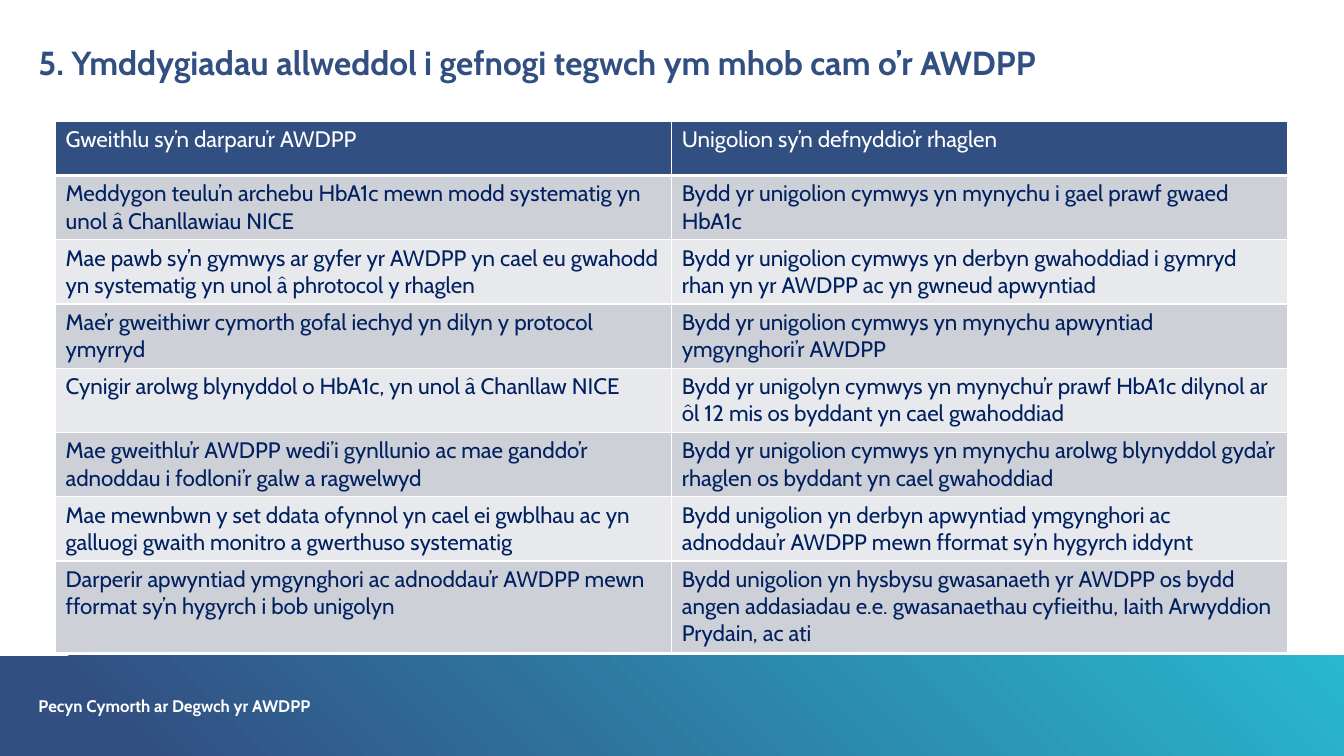
from lxml import etree
from pptx import Presentation
from pptx.dml.color import RGBColor
from pptx.enum import shapes, text
from pptx.oxml import ns
from pptx.util import Cm, Pt

FONT = "Cabin"
NAVY = RGBColor(0x32, 0x4F, 0x82)
TEAL = RGBColor(0x28, 0xB8, 0xCE)
INK = RGBColor(0x00, 0x20, 0x60)
WHITE = RGBColor(0xFF, 0xFF, 0xFF)
ROW_DARK = RGBColor(0xCE, 0xD0, 0xD8)
ROW_LIGHT = RGBColor(0xE8, 0xE9, 0xED)

BEHAVIOURS = [
    ("Gweithlu sy’n darparu’r AWDPP",
     "Unigolion sy’n defnyddio’r rhaglen"),
    ("Meddygon teulu’n archebu HbA1c mewn modd systematig yn unol â Chanllawiau NICE",
     "Bydd yr unigolion cymwys yn mynychu i gael prawf gwaed HbA1c"),
    ("Mae pawb sy’n gymwys ar gyfer yr AWDPP yn cael eu gwahodd yn systematig yn unol â phrotocol y rhaglen",
     "Bydd yr unigolion cymwys yn derbyn gwahoddiad i gymryd rhan yn yr AWDPP ac yn gwneud apwyntiad"),
    ("Mae’r gweithiwr cymorth gofal iechyd yn dilyn y protocol ymyrryd",
     "Bydd yr unigolion cymwys yn mynychu apwyntiad ymgynghori’r AWDPP"),
    ("Cynigir arolwg blynyddol o HbA1c, yn unol â Chanllaw NICE",
     "Bydd yr unigolyn cymwys yn mynychu’r prawf HbA1c dilynol ar ôl 12 mis os byddant yn cael gwahoddiad"),
    ("Mae gweithlu’r AWDPP wedi’i gynllunio ac mae ganddo’r adnoddau i fodloni’r galw a ragwelwyd",
     "Bydd yr unigolion cymwys yn mynychu arolwg blynyddol gyda’r rhaglen os byddant yn cael gwahoddiad"),
    ("Mae mewnbwn y set ddata ofynnol yn cael ei gwblhau ac yn galluogi gwaith monitro a gwerthuso systematig",
     "Bydd unigolion yn derbyn apwyntiad ymgynghori ac adnoddau’r AWDPP mewn fformat sy’n hygyrch iddynt"),
    ("Darperir apwyntiad ymgynghori ac adnoddau’r AWDPP mewn fformat sy’n hygyrch i bob unigolyn",
     "Bydd unigolion yn hysbysu gwasanaeth yr AWDPP os bydd angen addasiadau e.e. gwasanaethau cyfieithu, "
     "Iaith Arwyddion Prydain, ac ati"),
]
ROW_HEIGHTS = [Cm(1.37)] + [Cm(1.61)] * 6 + [Cm(2.27)]


def add_run(paragraph, words, size, colour, bold=False):
    run = paragraph.add_run()
    run.text = words
    run.font.name = FONT
    run.font.size = Pt(size)
    run.font.bold = bold
    run.font.color.rgb = colour


def fill_placeholder(holder, box, words, size, colour, spacing):
    holder.left, holder.top, holder.width, holder.height = box
    frame = holder.text_frame
    frame.margin_left = frame.margin_right = 0
    frame.margin_top = frame.margin_bottom = 0
    frame.word_wrap = True
    frame.auto_size = text.MSO_AUTO_SIZE.NONE
    frame.vertical_anchor = text.MSO_ANCHOR.TOP
    line = frame.paragraphs[0]
    properties = line._p.get_or_add_pPr()
    properties.set("marL", "0")
    properties.set("indent", "0")
    etree.SubElement(properties, ns.qn("a:buNone"))
    line.alignment = text.PP_ALIGN.LEFT
    line.line_spacing = spacing
    line.space_before = Pt(0)
    add_run(line, words, size, colour, bold=True)


def add_footer_band(slide, width):
    band = slide.shapes.add_shape(shapes.MSO_SHAPE.RECTANGLE, 0, Cm(16.53), width, Cm(2.52))
    band.shadow.inherit = False
    band.line.fill.background()
    band.fill.gradient()
    band.fill.gradient_angle = 45
    for stop, position, colour in zip(band.fill.gradient_stops, (0.1, 1), (NAVY, TEAL)):
        stop.position = position
        stop.color.rgb = colour
    # Send the band behind the footer text
    slide.shapes._spTree.insert(2, band._element)


def set_borders(cell, bottom):
    properties = cell._tc.get_or_add_tcPr()
    for side, points in (("lnL", 1), ("lnR", 1), ("lnT", 1), ("lnB", bottom)):
        edge = etree.SubElement(properties, ns.qn(f"a:{side}"), w=str(Pt(points)))
        solid = etree.SubElement(edge, ns.qn("a:solidFill"))
        etree.SubElement(solid, ns.qn("a:srgbClr"), val=str(WHITE))


def add_behaviours(slide):
    frame = slide.shapes.add_table(len(BEHAVIOURS), 2, Cm(1.4), Cm(3.05),
                                   Cm(31.06), sum(ROW_HEIGHTS))
    grid = frame.table
    grid.horz_banding = False
    for row, (height, entries) in enumerate(zip(ROW_HEIGHTS, BEHAVIOURS)):
        grid.rows[row].height = height
        header = row == 0
        shade = NAVY if header else (ROW_LIGHT, ROW_DARK)[row % 2]
        for column, words in enumerate(entries):
            cell = grid.cell(row, column)
            set_borders(cell, bottom=3 if header else 1)
            cell.fill.solid()
            cell.fill.fore_color.rgb = shade
            add_run(cell.text_frame.paragraphs[0], words, 16, WHITE if header else INK)


def main():
    deck = Presentation()
    deck.slide_width, deck.slide_height = Cm(33.87), Cm(19.05)
    slide = deck.slides.add_slide(deck.slide_layouts[1])

    # Heading and footer text
    heading, footer = slide.placeholders
    fill_placeholder(heading, (Cm(0.97), Cm(1.27), Cm(29.9), Cm(1.09)),
                     "5. Ymddygiadau allweddol i gefnogi tegwch ym mhob cam o’r AWDPP",
                     23.8, NAVY, 0.8)
    fill_placeholder(footer, (Cm(0.97), Cm(17.58), Cm(17.86), Cm(0.46)),
                     "Pecyn Cymorth ar Degwch yr AWDPP", 12, WHITE, 0.9)

    # Footer band and table
    add_footer_band(slide, deck.slide_width)
    add_behaviours(slide)

    deck.save("out.pptx")


if __name__ == "__main__":
    main()
